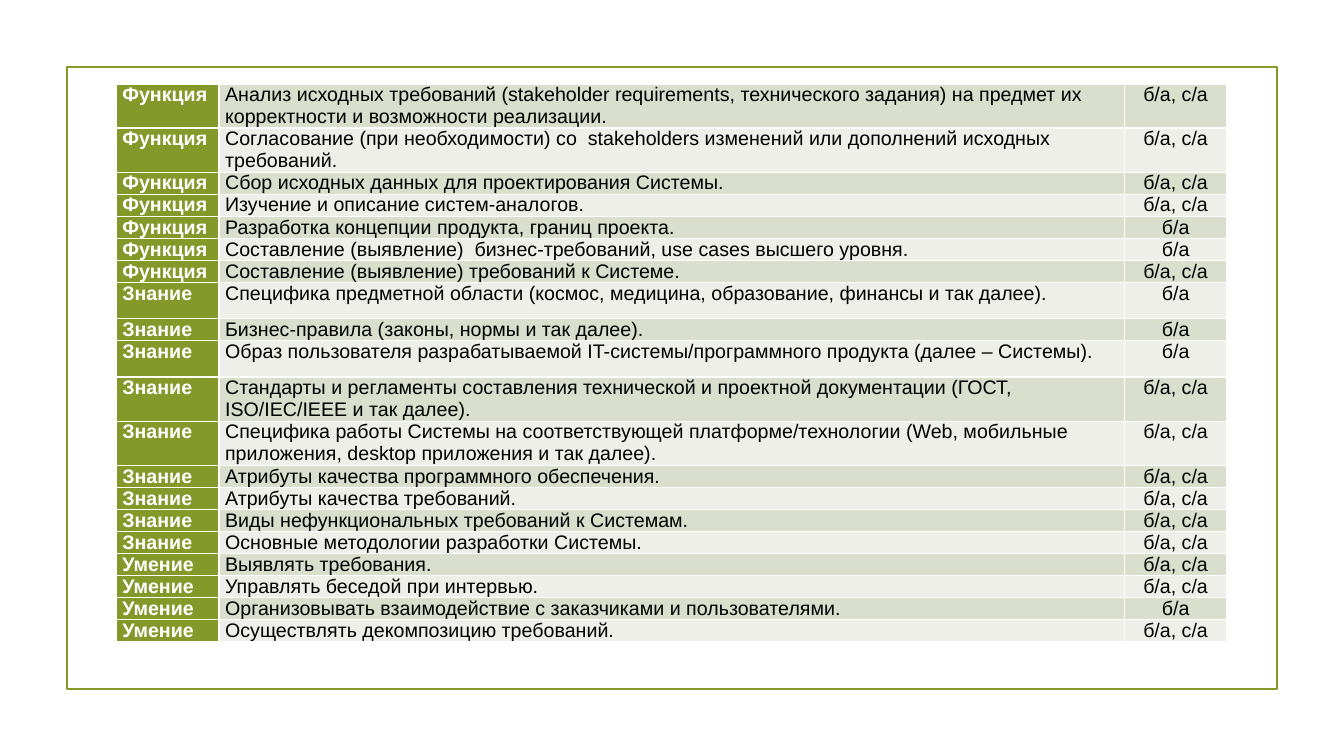
from lxml.etree import SubElement
from pptx import Presentation
from pptx.dml.color import RGBColor
from pptx.enum.shapes import MSO_SHAPE as Preset
from pptx.enum.text import PP_ALIGN as Align
from pptx.oxml.ns import qn
from pptx.util import Inches, Pt

WIDTH, HEIGHT = 13.33, 7.5
GREEN, WHITE, BLACK = "83992A", "FFFFFF", "000000"
BANDS = ("D9DECD", "EDEFE8")
COLUMN_SHARES = (0.0765, 0.6735, 0.0765)
LINE_HEIGHT = 0.18
FIRST_ROW_HEIGHT = 0.04

BUSINESS = "б/а"
BOTH = "б/а, с/а"

# Each group: kind, then (description, roles, lines reserved for the row)
GROUPS = {
    "Функция": [
        ("Анализ исходных требований (stakeholder requirements, технического задания) "
         "на предмет их корректности и возможности реализации.", BOTH, 1),
        ("Согласование (при необходимости) со  stakeholders изменений или дополнений "
         "исходных требований.", BOTH, 2),
        ("Сбор исходных данных для проектирования Системы.", BOTH, 1),
        ("Изучение и описание систем-аналогов.", BOTH, 1),
        ("Разработка концепции продукта, границ проекта.", BUSINESS, 1),
        ("Составление (выявление)  бизнес-требований, use cases высшего уровня.", BUSINESS, 1),
        ("Составление (выявление) требований к Системе.", BOTH, 1),
    ],
    "Знание": [
        ("Специфика предметной области (космос, медицина, образование, финансы "
         "и так далее).", BUSINESS, 2),
        ("Бизнес-правила (законы, нормы и так далее).", BUSINESS, 1),
        ("Образ пользователя разрабатываемой IT-системы/программного продукта "
         "(далее – Системы).", BUSINESS, 2),
        ("Стандарты и регламенты составления технической и проектной документации "
         "(ГОСТ, ISO/IEC/IEEE и так далее).", BOTH, 2),
        ("Специфика работы Системы на соответствующей платформе/технологии "
         "(Web, мобильные приложения, desktop приложения и так далее).", BOTH, 2),
        ("Атрибуты качества программного обеспечения.", BOTH, 1),
        ("Атрибуты качества требований.", BOTH, 1),
        ("Виды нефункциональных требований к Системам.", BOTH, 1),
        ("Основные методологии разработки Системы.", BOTH, 1),
    ],
    "Умение": [
        ("Выявлять требования.", BOTH, 1),
        ("Управлять беседой при интервью.", BOTH, 1),
        ("Организовывать взаимодействие с заказчиками и пользователями.", BUSINESS, 1),
        ("Осуществлять декомпозицию требований.", BOTH, 1),
    ],
}


def color(value):
    return RGBColor.from_string(value)


def across(share):
    return Inches(WIDTH * share)


def down(share):
    return Inches(HEIGHT * share)


def add_frame(slide):
    """Draw the green outline around the content."""
    frame = slide.shapes.add_shape(
        Preset.RECTANGLE, across(0.05), down(0.089), across(0.9), down(0.822))
    frame.shadow.inherit = False
    frame.fill.background()
    frame.line.color.rgb = color(GREEN)
    frame.line.width = Pt(1.25)


def add_borders(cell):
    """Put white one-point lines on all sides; they must precede the fill."""
    properties = cell._tc.get_or_add_tcPr()
    for side in ("a:lnL", "a:lnR", "a:lnT", "a:lnB"):
        line = SubElement(properties, qn(side), w=str(Pt(1)))
        fill = SubElement(line, qn("a:solidFill"))
        SubElement(fill, qn("a:srgbClr"), val=WHITE)


def fill_cell(cell, text, background, text_color=BLACK, bold=False, align=Align.LEFT):
    add_borders(cell)
    cell.fill.solid()
    cell.fill.fore_color.rgb = color(background)
    margins = {"margin_left": 0.06, "margin_right": 0.06, "margin_top": 0, "margin_bottom": 0}
    for name, value in margins.items():
        setattr(cell, name, Inches(value))
    cell.text = text
    paragraph = cell.text_frame.paragraphs[0]
    paragraph.alignment = align
    font = paragraph.runs[0].font
    for name, value in {"name": "Arial", "size": Pt(14), "bold": bold}.items():
        setattr(font, name, value)
    font.color.rgb = color(text_color)


def add_competence_table(slide):
    entries = [(kind, *entry) for kind, group in GROUPS.items() for entry in group]
    table_height = down(0.779)
    holder = slide.shapes.add_table(
        len(entries), len(COLUMN_SHARES), across(0.0865), down(0.111),
        across(sum(COLUMN_SHARES)), table_height)
    table = holder.table
    for column, share in zip(table.columns, COLUMN_SHARES):
        column.width = across(share)
    for index, (kind, description, roles, lines) in enumerate(entries):
        table.rows[index].height = Inches(LINE_HEIGHT * lines if index else FIRST_ROW_HEIGHT)
        band = BANDS[index % 2]
        fill_cell(table.cell(index, 0), kind, GREEN, WHITE, bold=True)
        fill_cell(table.cell(index, 1), description, band)
        fill_cell(table.cell(index, 2), roles, band, align=Align.CENTER)
    holder.height = table_height


def main():
    presentation = Presentation()
    presentation.slide_width = Inches(WIDTH)
    presentation.slide_height = Inches(HEIGHT)
    slide = presentation.slides.add_slide(presentation.slide_layouts[6])
    add_frame(slide)
    add_competence_table(slide)
    presentation.save("out.pptx")


if __name__ == "__main__":
    main()
